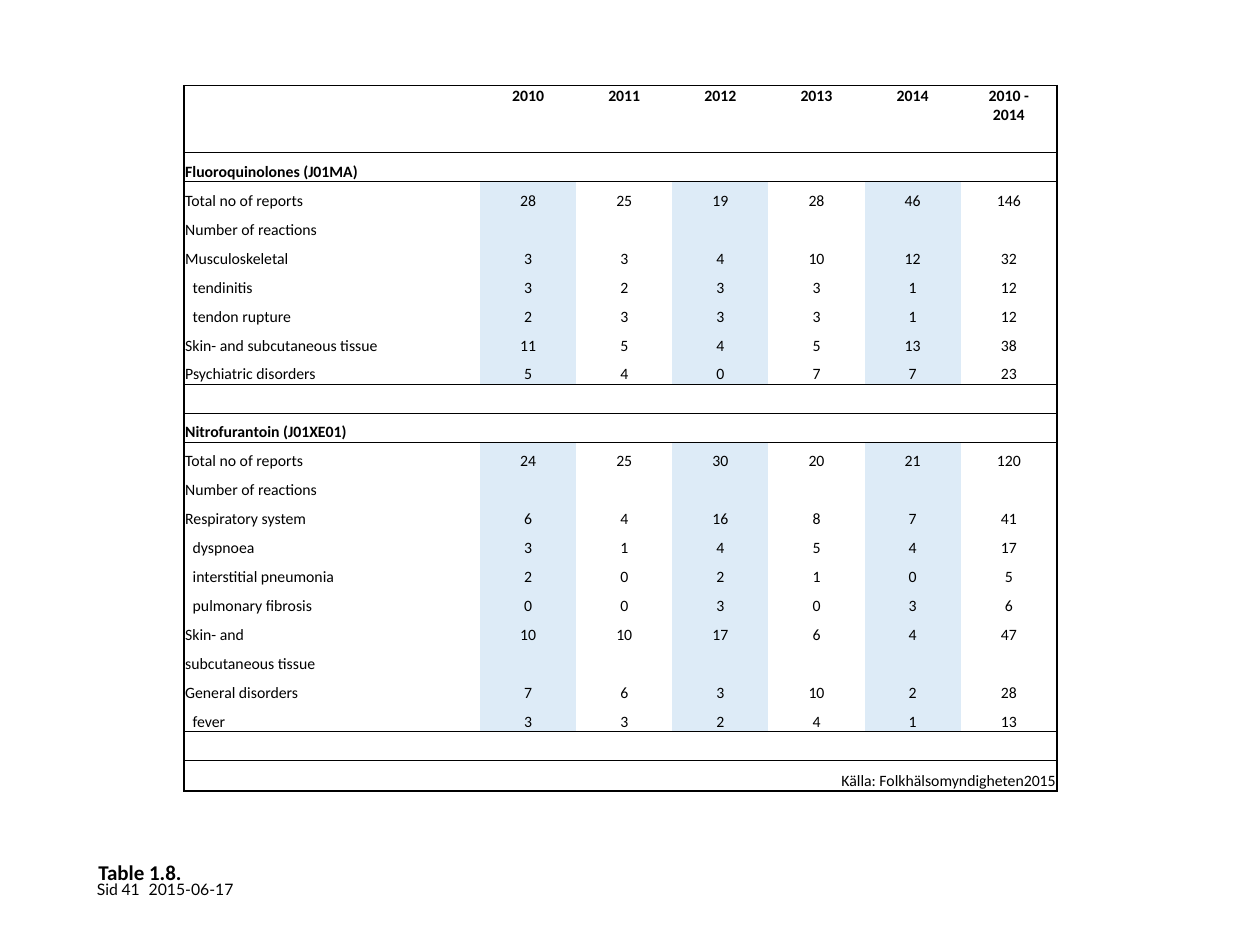
from dataclasses import dataclass

from lxml.etree import SubElement
from pptx import Presentation
from pptx.dml.color import RGBColor
from pptx.enum.text import MSO_ANCHOR, MSO_AUTO_SIZE, PP_ALIGN
from pptx.oxml import parse_xml
from pptx.oxml.ns import nsdecls, qn
from pptx.util import Inches, Pt


@dataclass(frozen=True)
class Theme:
    """Colours, fonts and type sizes of the slide."""
    ink: str = "000000"
    band: str = "DDEBF7"
    font: str = "Calibri"
    footer_font: str = "Lato"
    body: int = 9
    title: int = 12
    outer: float = 1
    rule: float = 0.5


T = Theme()
LEFT, TOP, WIDTH, HEIGHT = 1.46, 0.68, 6.93, 5.59
LABEL_W, HEAD_H, ROW_H, LAST_H = 2.35, 0.53, 0.23, 0.24
INSET, INDENT = 0.01, 0.06
NO_STYLE = "{2D5ABB26-0587-4C30-8999-92F81FD0307C}"
HEADINGS = ["2010", "2011", "2012", "2013", "2014", "2010 -\n2014"]
SOURCE = "Källa: Folkhälsomyndigheten2015"
FLUOROQUINOLONES = [
    ("Total no of reports", 0, [28, 25, 19, 28, 46, 146]),
    ("Number of reactions", 0, []),
    ("Musculoskeletal", 0, [3, 3, 4, 10, 12, 32]),
    ("tendinitis", 1, [3, 2, 3, 3, 1, 12]),
    ("tendon rupture", 1, [2, 3, 3, 3, 1, 12]),
    ("Skin- and subcutaneous tissue", 0, [11, 5, 4, 5, 13, 38]),
    ("Psychiatric disorders", 0, [5, 4, 0, 7, 7, 23]),
]
NITROFURANTOIN = [
    ("Total no of reports", 0, [24, 25, 30, 20, 21, 120]),
    ("Number of reactions", 0, []),
    ("Respiratory system", 0, [6, 4, 16, 8, 7, 41]),
    ("dyspnoea", 1, [3, 1, 4, 5, 4, 17]),
    ("interstitial pneumonia", 1, [2, 0, 2, 1, 0, 5]),
    ("pulmonary fibrosis", 1, [0, 0, 3, 0, 3, 6]),
    ("Skin- and", 0, [10, 10, 17, 6, 4, 47]),
    ("subcutaneous tissue", 0, []),
    ("General disorders", 0, [7, 6, 3, 10, 2, 28]),
    ("fever", 1, [3, 3, 2, 4, 1, 13]),
]


def write(p, text, size, font, bold=False, align=PP_ALIGN.LEFT):
    """Put formatted text in a paragraph."""
    p.text = text
    p.alignment = align
    for r in p.runs:
        r.font.size = Pt(size)
        r.font.name = font
        r.font.bold = bold
        r.font.color.rgb = RGBColor.from_string(T.ink)


def set_frame(tf, wrap=True, anchor=MSO_ANCHOR.BOTTOM):
    """Give a text frame no insets, an anchor and a wrap mode."""
    tf.margin_left = tf.margin_right = tf.margin_top = tf.margin_bottom = 0
    tf.vertical_anchor = anchor
    tf.word_wrap = wrap
    tf.auto_size = MSO_AUTO_SIZE.NONE


def add_title(s, text):
    """Fill the title placeholder under the table."""
    sp = s.shapes.title
    sp.left, sp.top, sp.width, sp.height = map(Inches, (0.78, 6.57, 3.2, 0.45))
    set_frame(sp.text_frame)
    p = sp.text_frame.paragraphs[0]
    write(p, text, T.title, T.font, bold=True)
    p.line_spacing = Pt(34)


def add_footer(s, text, box, align=PP_ALIGN.LEFT, **frame):
    """Add one piece of the footer line."""
    tf = s.shapes.add_textbox(*map(Inches, box)).text_frame
    set_frame(tf, **frame)
    write(tf.paragraphs[0], text, T.body, T.footer_font, align=align)


def fill_cell(cell, text="", indent=0, **style):
    """Write a cell, keeping empty cells at body size."""
    cell.margin_left = cell.margin_right = cell.margin_top = Inches(INSET)
    cell.margin_bottom = 0
    p = cell.text_frame.paragraphs[0]
    if text:
        write(p, text, T.body, T.font, **style)
        if indent:
            p._p.get_or_add_pPr().set("marL", str(Inches(INDENT * indent)))
    else:
        SubElement(p._p, qn("a:endParaRPr"), sz=str(T.body * 100))


def set_borders(cell, widths):
    """Draw the cell edges given as a dict of side to points."""
    tc_pr = cell._tc.get_or_add_tcPr()
    edges = [(side, widths[side]) for side in "LRTB" if widths.get(side)]
    for i, (side, width) in enumerate(edges):
        tc_pr.insert(i, parse_xml(
            f'<a:ln{side} {nsdecls("a")} w="{Pt(width)}"><a:solidFill>'
            f'<a:srgbClr val="{T.ink}"/></a:solidFill></a:ln{side}>'))


def build_rows():
    """List every table row as kind, label, indent and values."""
    rows = [("head", "", 0, HEADINGS)]
    for name, data in (("Fluoroquinolones (J01MA)", FLUOROQUINOLONES),
                       ("Nitrofurantoin (J01XE01)", NITROFURANTOIN)):
        rows.append(("section", name, 0, []))
        rows += [("data", *row) for row in data]
        rows.append(("gap", "", 0, []))
    return rows + [("source", "", 0, ["", "", SOURCE])]


def add_report_table(s):
    """Add the table of reports and reactions by year."""
    rows = build_rows()
    n_rows, n_cols = len(rows), len(HEADINGS) + 1
    table = s.shapes.add_table(n_rows, n_cols, *map(Inches, (LEFT, TOP, WIDTH, HEIGHT))).table
    table.first_row = table.horz_banding = False
    table._tbl.tblPr.find(qn("a:tableStyleId")).text = NO_STYLE
    for c, col in enumerate(table.columns):
        col.width = Inches((WIDTH - LABEL_W) / (n_cols - 1) if c else LABEL_W)
    for row, (kind, *_) in zip(table.rows, rows):
        row.height = Inches({"head": HEAD_H, "source": LAST_H}.get(kind, ROW_H))
    kinds = [row[0] for row in rows]
    ruled = [{a, b} in ({"head", "section"}, {"data", "gap"}, {"gap", "section"})
             for a, b in zip(kinds, kinds[1:])]
    tops = [T.outer] + [T.rule * on for on in ruled]
    bottoms = tops[1:] + [T.outer]
    for i, (kind, label, indent, values) in enumerate(rows):
        texts = [label, *map(str, values)]
        texts += [""] * (n_cols - len(texts))
        value_align = PP_ALIGN.RIGHT if kind == "source" else PP_ALIGN.CENTER
        for c, text in enumerate(texts):
            cell = table.cell(i, c)
            fill_cell(cell, text, 0 if c else indent, bold=kind in ("head", "section"),
                      align=value_align if c else PP_ALIGN.LEFT)
            cell.vertical_anchor = MSO_ANCHOR.TOP if kind == "head" else MSO_ANCHOR.BOTTOM
            if kind == "data" and c in (1, 3, 5):
                cell.fill.solid()
                cell.fill.fore_color.rgb = RGBColor.from_string(T.band)
            else:
                cell.fill.background()
            merged = kind == "source" and c == 3
            set_borders(cell, {"L": T.outer * (c == 0),
                               "R": T.outer * (c == n_cols - 1 or merged),
                               "T": tops[i], "B": bottoms[i]})
    table.cell(n_rows - 1, 3).merge(table.cell(n_rows - 1, n_cols - 1))


def main():
    """Build the slide and save it."""
    prs = Presentation()
    prs.slide_width, prs.slide_height = Inches(10), Inches(7.5)
    s = prs.slides.add_slide(prs.slide_layouts[5])
    add_footer(s, "Sid", (0.77, 6.98, 0.17, 0.15), wrap=False, anchor=MSO_ANCHOR.TOP)
    add_footer(s, "41", (0.78, 6.93, 0.33, 0.2), PP_ALIGN.RIGHT)
    add_footer(s, "2015-06-17", (1.18, 6.93, 0.86, 0.2))
    add_title(s, "Table 1.8.")
    add_report_table(s)
    prs.save("out.pptx")


if __name__ == "__main__":
    main()
